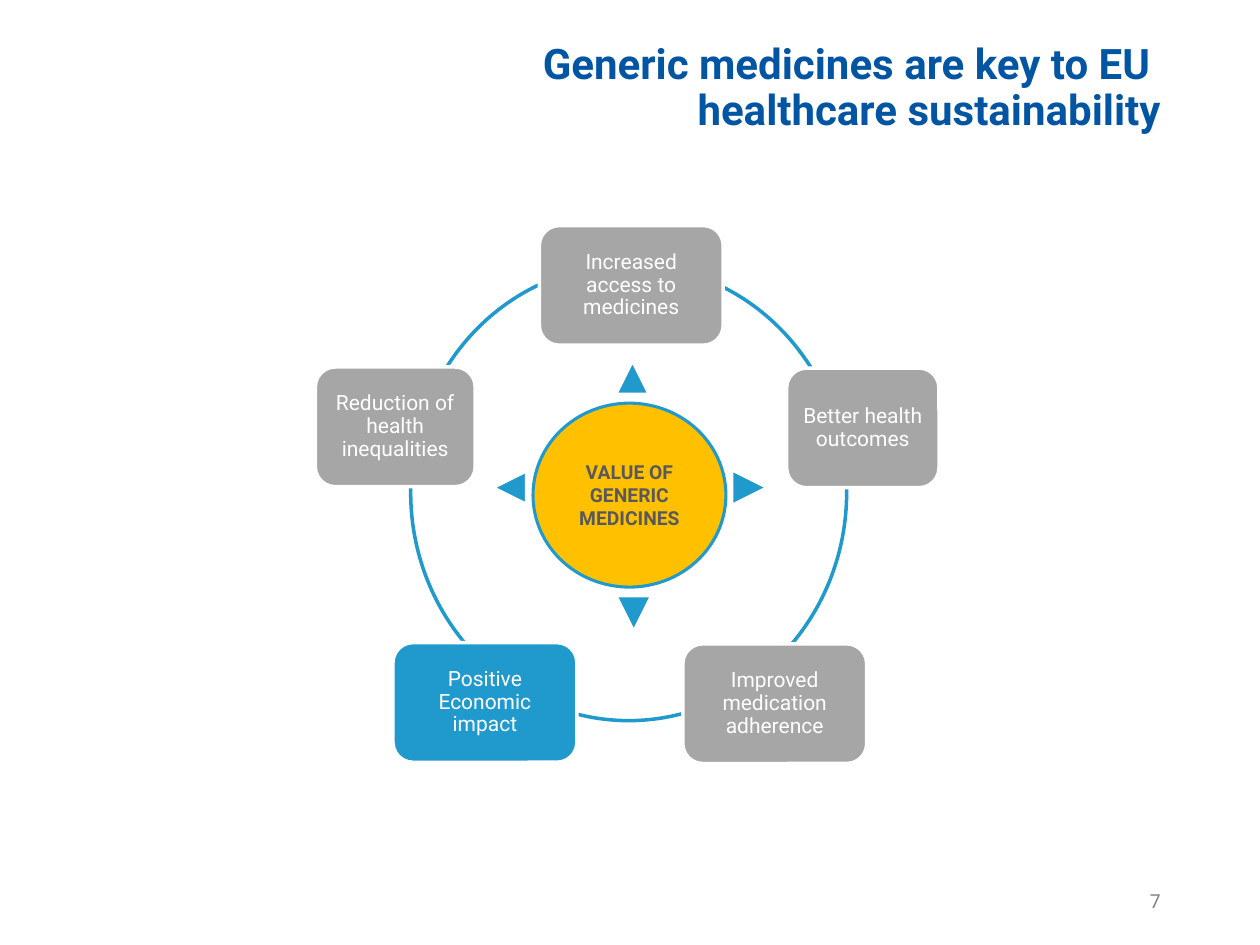
from pptx import Presentation, util as u
from pptx.dml.color import RGBColor
from pptx.enum import shapes, text

BLUE = RGBColor(0x20, 0x9A, 0xCD)
NAVY = RGBColor(0x01, 0x55, 0xA3)
GREY = RGBColor(0xA6, 0xA6, 0xA6)
GOLD = RGBColor(0xFF, 0xC0, 0x00)
DARK = RGBColor(0x59, 0x59, 0x59)
PALE = RGBColor(0x82, 0x82, 0x82)
WHITE = RGBColor(0xFF, 0xFF, 0xFF)
FORM = shapes.MSO_SHAPE
ALIGN = text.PP_ALIGN


class Deck:
    font = "Roboto"

    def __init__(self, wide, high):
        self.show = Presentation()
        self.show.slide_width = u.Pt(wide)
        self.show.slide_height = u.Pt(high)
        self.slide = self.show.slides.add_slide(self.show.slide_layouts[6])

    def words(self, item, lines, size, color, align, bold=False, space=1.0):
        frame = item.text_frame
        frame.word_wrap = True
        frame.vertical_anchor = text.MSO_ANCHOR.MIDDLE
        para = frame.paragraphs[0]
        para.alignment = align
        para.line_spacing = space
        for i, line in enumerate(lines):
            if i:
                para.add_line_break()
            run = para.add_run()
            run.text = line
            run.font.name = self.font
            run.font.size = u.Pt(size)
            run.font.bold = bold
            run.font.color.rgb = color

    def label(self, area, lines, size, color, **style):
        item = self.slide.shapes.add_textbox(*map(u.Pt, area))
        self.words(item, lines, size, color, ALIGN.RIGHT, **style)

    def shape(self, form, area, fill=None, line=None, width=1.0):
        item = self.slide.shapes.add_shape(form, *map(u.Pt, area))
        item.shadow.inherit = False
        if fill is None:
            item.fill.background()
        else:
            item.fill.solid()
            item.fill.fore_color.rgb = fill
        if line is None:
            item.line.fill.background()
        else:
            item.line.color.rgb = line
            item.line.width = u.Pt(width)
        return item

    def box(self, left, top, wide, line, fill=GREY):
        area = left, top, wide, 68.4
        item = self.shape(FORM.ROUNDED_RECTANGLE, area, fill, WHITE, 2)
        frame = item.text_frame
        frame.margin_left = frame.margin_right = u.Pt(3.9)
        frame.margin_top = frame.margin_bottom = u.Pt(3.9)
        self.words(item, [line], 12, WHITE, ALIGN.CENTER, space=0.9)

    def arrow(self, left, top, turn, line=None):
        area = left, top, 17.3, 17.3
        item = self.shape(FORM.ISOSCELES_TRIANGLE, area, BLUE, line, 0.75)
        item.rotation = turn

    def save(self):
        self.show.save("out.pptx")


def main():
    deck = Deck(720, 540)
    deck.label((49.7, -1.4, 620.6, 104.4),
               ["Generic medicines are key to EU ", "healthcare sustainability"],
               24, NAVY, bold=True, space=0.9)
    deck.label((508.3, 500.4, 162, 28.8), ["7"], 11, PALE)

    deck.shape(FORM.OVAL, (234.7, 151.2, 249.1, 260.6), None, BLUE, 2)
    deck.box(308.2, 128.9, 105.1, "Increased access to medicines")
    deck.box(449.5, 210.3, 87.1, "Better health outcomes")
    deck.box(390.2, 367.9, 105.1, "Improved medication adherence")
    deck.box(224.6, 367.2, 105.1, "Positive Economic impact", BLUE)
    deck.box(180.2, 209.7, 91.4, "Reduction of health inequalities")

    core = deck.shape(FORM.OVAL, (304.6, 230.4, 110.2, 105.1), GOLD, BLUE, 1.75)
    deck.words(core, ["VALUE OF GENERIC MEDICINES"], 11, DARK, ALIGN.CENTER, bold=True)

    deck.arrow(352.8, 207.4, 0, WHITE)
    deck.arrow(353.5, 341.3, 180)
    deck.arrow(419, 270, 90)
    deck.arrow(283, 270, 270, WHITE)
    deck.save()


if __name__ == "__main__":
    main()
